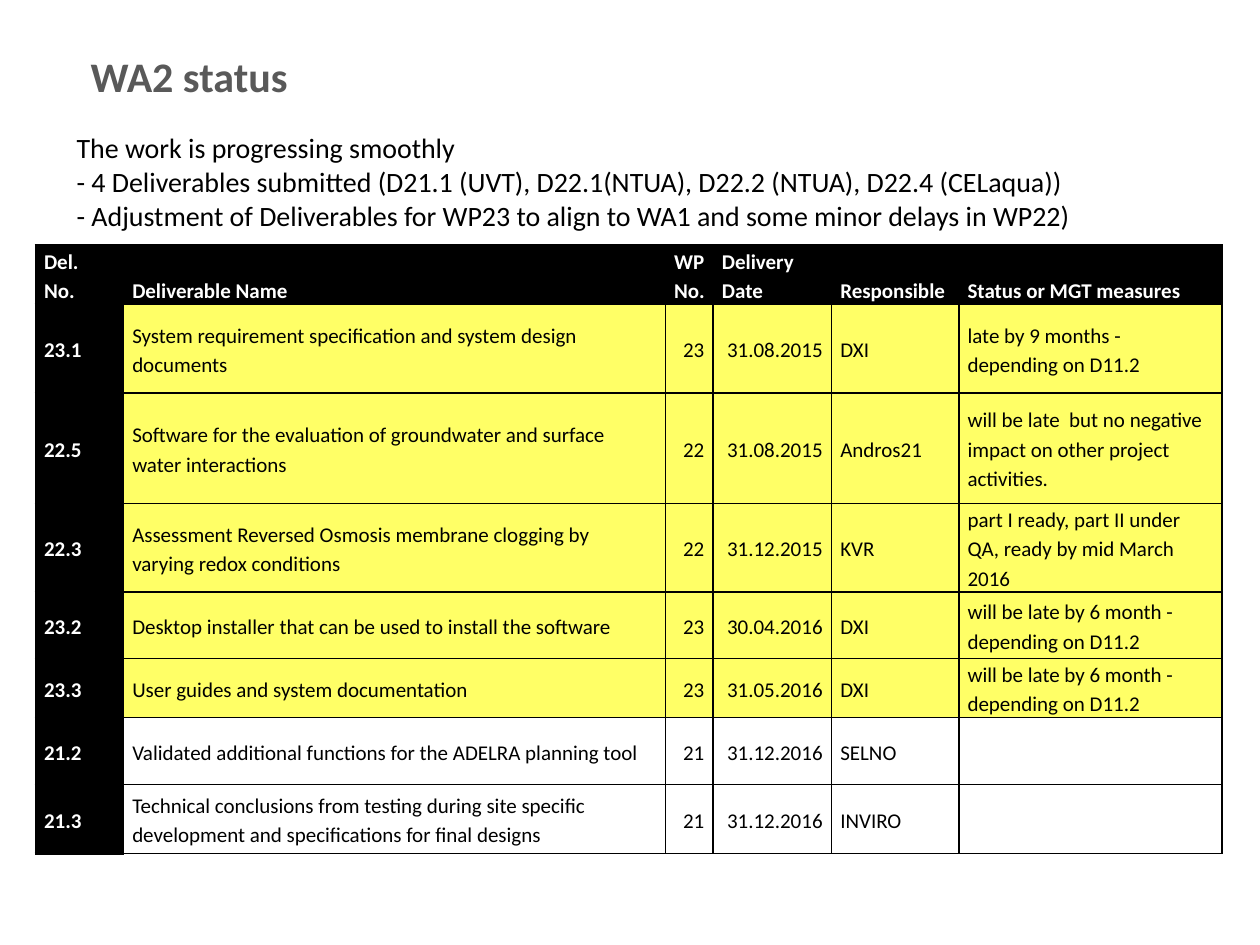
import pptx
import pptx.util
import pptx.dml.color
import pptx.enum.text
import pptx.oxml.ns
from lxml import etree

Inches, Pt = pptx.util.Inches, pptx.util.Pt
ANCHOR = pptx.enum.text.MSO_ANCHOR
ALIGN = pptx.enum.text.PP_ALIGN

COLORS = {"black": "000000", "white": "FFFFFF", "yellow": "FFFF66", "grey": "595959"}
FONT = "Calibri"
TITLE = "WA2 status"
SUMMARY = [
    "The work is progressing smoothly",
    "- 4 Deliverables submitted (D21.1 (UVT), D22.1(NTUA), D22.2 (NTUA), D22.4 (CELaqua))",
    "- Adjustment of Deliverables for WP23 to align to WA1 and some minor delays in WP22)",
]
HEADER = ("Del. \vNo.", "Deliverable Name", "WP\vNo.", "Delivery \vDate",
          "Responsible", "Status or MGT measures")
DELIVERABLES = [
    ("23.1", "System requirement specification and system design documents",
     "23", "31.08.2015", "DXI", "late by 9 months - depending on D11.2"),
    ("22.5", "Software for the evaluation of groundwater and surface water interactions",
     "22", "31.08.2015", "Andros21",
     "will be late  but no negative impact on other project activities."),
    ("22.3", "Assessment Reversed Osmosis membrane clogging by varying redox conditions",
     "22", "31.12.2015", "KVR", "part I ready, part II under QA, ready by mid March 2016"),
    ("23.2", "Desktop installer that can be used to install the software",
     "23", "30.04.2016", "DXI", "will be late by 6 month - depending on D11.2"),
    ("23.3", "User guides and system documentation",
     "23", "31.05.2016", "DXI", "will be late by 6 month - depending on D11.2"),
    ("21.2", "Validated additional functions for the ADELRA planning tool",
     "21", "31.12.2016", "SELNO", ""),
    ("21.3", "Technical conclusions from testing during site specific development "
     "and specifications for final designs", "21", "31.12.2016", "INVIRO", ""),
]
COL_WIDTHS = (0.7, 4.3, 0.38, 0.94, 1.01, 2.09)
ROW_HEIGHTS = (0.46, 0.7, 0.88, 0.7, 0.53, 0.46, 0.53, 0.55)
RIGHT_ALIGNED = (2, 3)


def rgb(name):
    return pptx.dml.color.RGBColor.from_string(COLORS[name])


def style(p, size, color, bold=False):
    for r in p.runs:
        r.font.name = FONT
        r.font.size = Pt(size)
        r.font.bold = bold
        r.font.color.rgb = rgb(color)


def add_borders(cell, widths):
    qn = pptx.oxml.ns.qn
    tc_pr = cell._tc.get_or_add_tcPr()
    for side, width in widths.items():
        ln = etree.SubElement(tc_pr, qn("a:ln" + side), w=str(Pt(width)))
        fill = etree.SubElement(ln, qn("a:solidFill"))
        etree.SubElement(fill, qn("a:srgbClr"), val=COLORS["black"])


def fill_cell(cell, text, row, col):
    is_header = row == 0
    is_label = is_header or col == 0
    last = row == len(DELIVERABLES)
    add_borders(cell, {"L": 1, "R": 1, "T": 2 if is_header else 1,
                       "B": 2 if col == 0 and (is_header or last) else 1})
    cell.margin_left = Inches(0.07)
    cell.margin_right = Inches(0.04 if is_header else 0.07)
    cell.margin_top = cell.margin_bottom = 0
    cell.vertical_anchor = ANCHOR.BOTTOM if is_header else ANCHOR.MIDDLE
    cell.fill.solid()
    body = "yellow" if DELIVERABLES[row - 1][-1] else "white"
    cell.fill.fore_color.rgb = rgb("black" if is_label else body)
    p = cell.text_frame.paragraphs[0]
    p.text = text
    p.line_spacing = 1.15
    if col in RIGHT_ALIGNED and not is_header:
        p.alignment = ALIGN.RIGHT
    style(p, 12, "white" if is_label else "black", is_label)


prs = pptx.Presentation()
prs.slide_width, prs.slide_height = Inches(10), Inches(7.5)
s = prs.slides.add_slide(prs.slide_layouts[5])

title = s.shapes.title
title.left, title.top = Inches(0.62), Inches(0.35)
title.width, title.height = Inches(7.92), Inches(0.5)
tf = title.text_frame
tf.text = TITLE
tf.auto_size = pptx.enum.text.MSO_AUTO_SIZE.NONE
tf.vertical_anchor = ANCHOR.TOP
tf.paragraphs[0].alignment = ALIGN.LEFT
style(tf.paragraphs[0], 24, "grey", True)

frame = s.shapes.add_table(len(ROW_HEIGHTS), len(COL_WIDTHS), Inches(0.28), Inches(1.95),
                           Inches(sum(COL_WIDTHS)), Inches(sum(ROW_HEIGHTS)))
table = frame.table
for column, width in zip(table.columns, COL_WIDTHS):
    column.width = Inches(width)
for table_row, height in zip(table.rows, ROW_HEIGHTS):
    table_row.height = Inches(height)
for row, texts in enumerate([HEADER] + DELIVERABLES):
    for col, text in enumerate(texts):
        fill_cell(table.cell(row, col), text, row, col)

summary = s.shapes.add_textbox(Inches(0.51), Inches(0.99), Inches(9.49), Inches(0.91))
tf = summary.text_frame
tf.word_wrap = True
tf.text = "\n".join(SUMMARY)
for p in tf.paragraphs:
    style(p, 16, "black")

prs.save("out.pptx")
